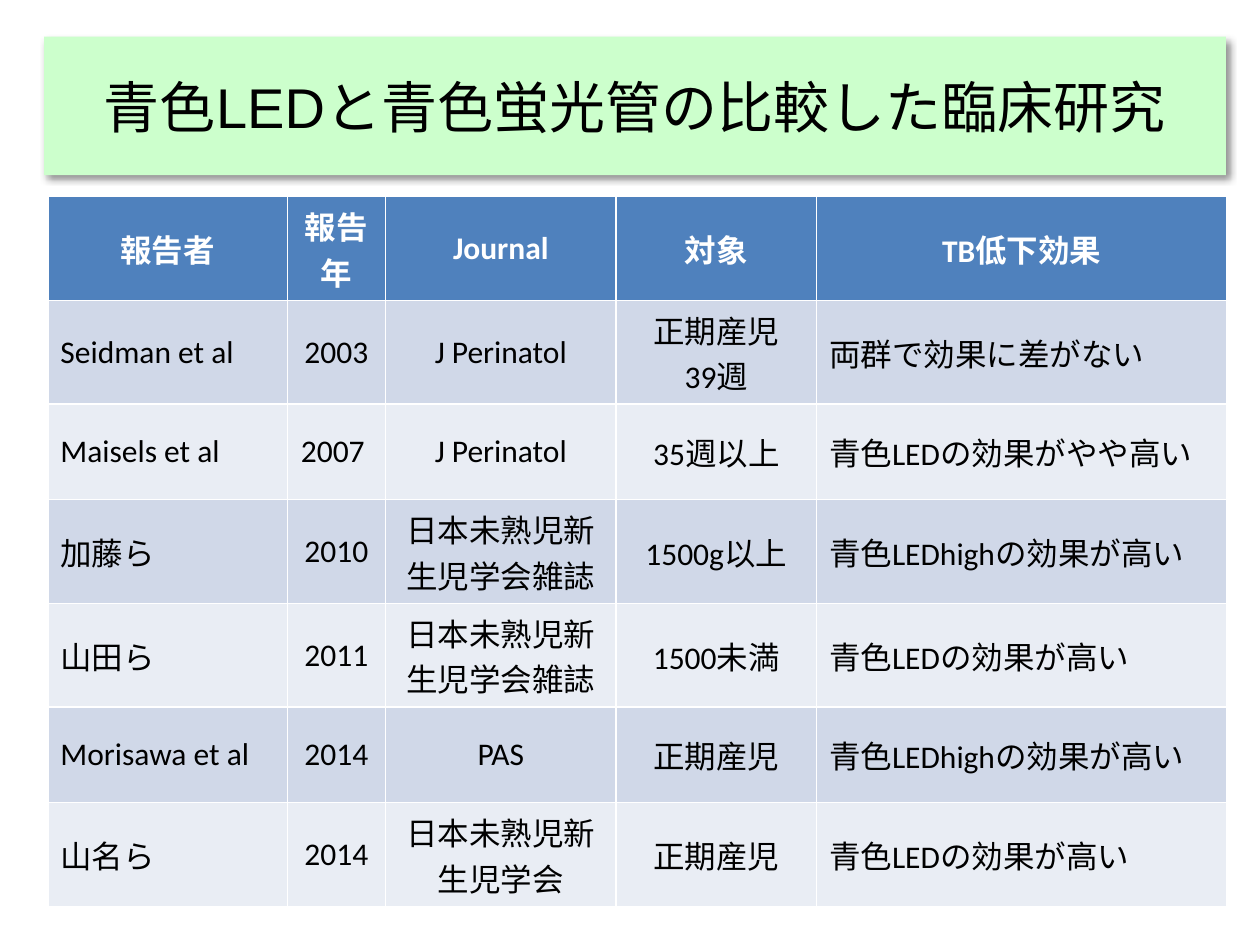
from dataclasses import dataclass

from lxml.etree import SubElement
from pptx import Presentation
from pptx.dml.color import RGBColor as RGB
from pptx.enum.text import MSO_ANCHOR as Anchor, MSO_AUTO_SIZE as Fit, PP_ALIGN as Align
from pptx.oxml.ns import qn
from pptx.util import Inches, Pt


@dataclass(frozen=True)
class Theme:
    head_font: str = "Arial"
    body_font: str = "Calibri"
    head_size: int = 32
    body_size: int = 18
    ink: str = "000000"
    white: str = "FFFFFF"
    banner: str = "CCFFCC"
    header: str = "4F81BD"
    bands: tuple = ("D0D8E8", "E9EDF4")


THEME = Theme()
TITLE = "青色LEDと青色蛍光管の比較した臨床研究"
WIDTHS = (1.9, 0.78, 1.83, 1.59, 3.26)
LEFT_COLS = (0, 4)
HEADS = ("報告者", "報告年", "Journal", "対象", "TB低下効果")
STUDIES = (
    ("Seidman et al", "2003", "J Perinatol", "正期産児\n39週", "両群で効果に差がない"),
    ("Maisels et al", "2007 ", "J Perinatol", "35週以上", "青色LEDの効果がやや高い"),
    ("加藤ら", "2010", "日本未熟児新生児学会雑誌", "1500g以上", "青色LEDhighの効果が高い"),
    ("山田ら", "2011", "日本未熟児新生児学会雑誌", "1500未満", "青色LEDの効果が高い"),
    ("Morisawa et al", "2014", "PAS", "正期産児", "青色LEDhighの効果が高い"),
    ("山名ら", "2014", "日本未熟児新生児学会", "正期産児", "青色LEDの効果が高い"),
)


def paint(item, color):
    item.fill.solid()
    item.fill.fore_color.rgb = RGB.from_string(color)


def style(frame, font, size, color, align, bold=False):
    for para in frame.paragraphs:
        para.alignment = align
        para.font.name = font
        para.font.size = Pt(size)
        para.font.bold = bold
        para.font.color.rgb = RGB.from_string(color)


def add_shadow(shape):
    shape.shadow.inherit = False
    effects = shape.element.spPr.find(qn("a:effectLst"))
    outer = SubElement(effects, qn("a:outerShdw"), blurRad=str(Pt(4)), dist=str(Pt(3)),
                       dir=str(45 * 60000), algn="tl", rotWithShape="0")
    color = SubElement(outer, qn("a:srgbClr"), val=THEME.ink)
    SubElement(color, qn("a:alpha"), val="43000")


def place_title(slide, left, top, width, height):
    title = slide.shapes.title
    title.left, title.top, title.width, title.height = left, top, width, height
    paint(title, THEME.banner)
    add_shadow(title)
    frame = title.text_frame
    frame.text = TITLE
    frame.word_wrap = True
    frame.auto_size = Fit.NONE
    frame.vertical_anchor = Anchor.MIDDLE
    style(frame, THEME.head_font, THEME.head_size, THEME.ink, Align.CENTER)


def place_studies(slide, left, top, width, height):
    rows = (HEADS, *STUDIES)
    table = slide.shapes.add_table(len(rows), len(HEADS), left, top, width, height).table
    for col, share in zip(table.columns, WIDTHS):
        col.width = int(width * share / sum(WIDTHS))
    for r, row in enumerate(rows):
        head = r == 0
        fill = THEME.header if head else THEME.bands[(r - 1) % 2]
        color = THEME.white if head else THEME.ink
        for c, text in enumerate(row):
            cell = table.cell(r, c)
            cell.text = text
            cell.vertical_anchor = Anchor.MIDDLE
            paint(cell, fill)
            align = Align.LEFT if c in LEFT_COLS and not head else Align.CENTER
            style(cell.text_frame, THEME.body_font, THEME.body_size, color, align, head)


def main():
    deck = Presentation()
    deck.slide_width, deck.slide_height = Inches(10), Inches(7.5)
    slide = deck.slides.add_slide(deck.slide_layouts.get_by_name("Title Only"))
    place_title(slide, Inches(0.35), Inches(0.29), Inches(9.38), Inches(1.1))
    place_studies(slide, Inches(0.38), Inches(1.56), Inches(9.36), Inches(5.3))
    deck.save("out.pptx")


if __name__ == "__main__":
    main()
